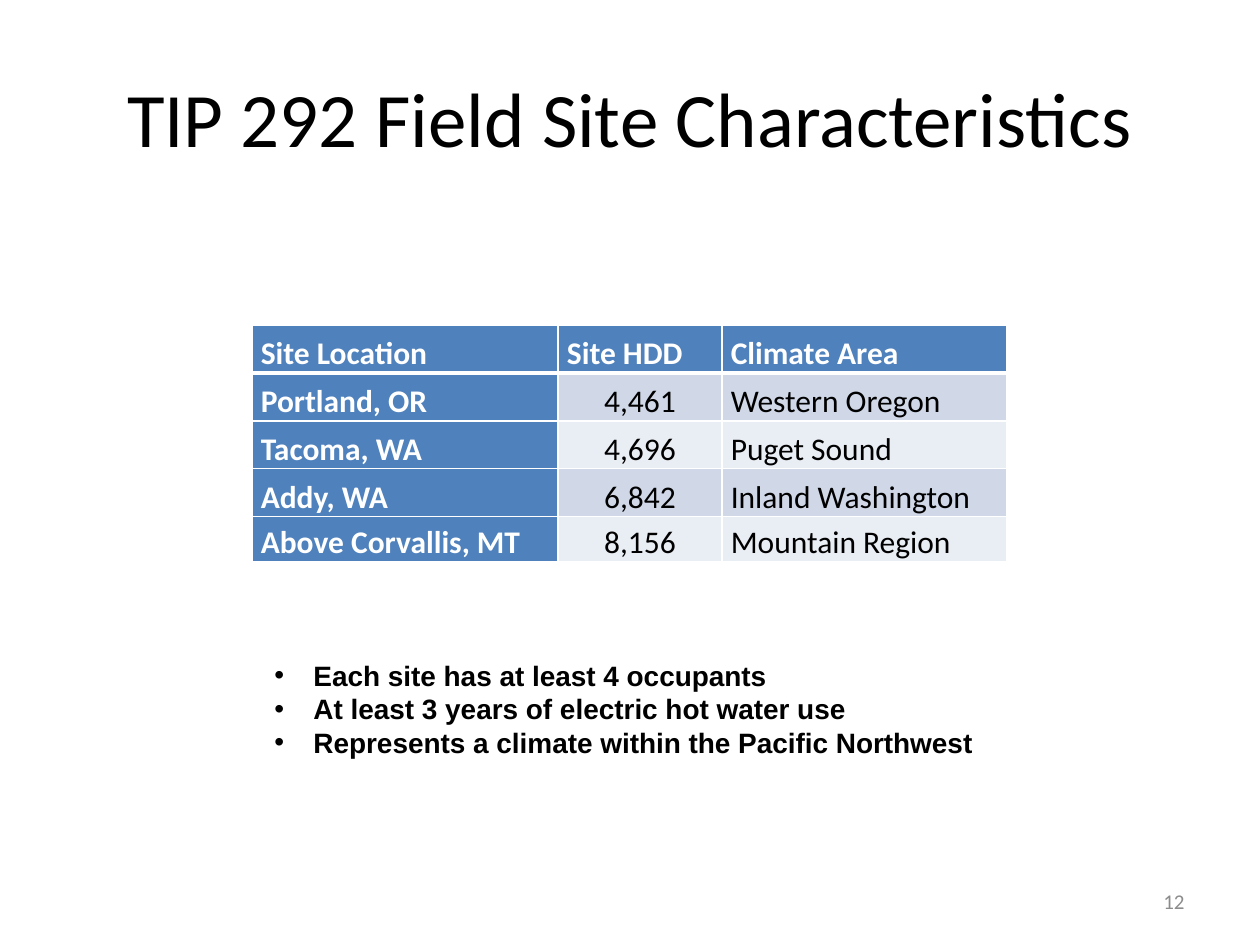
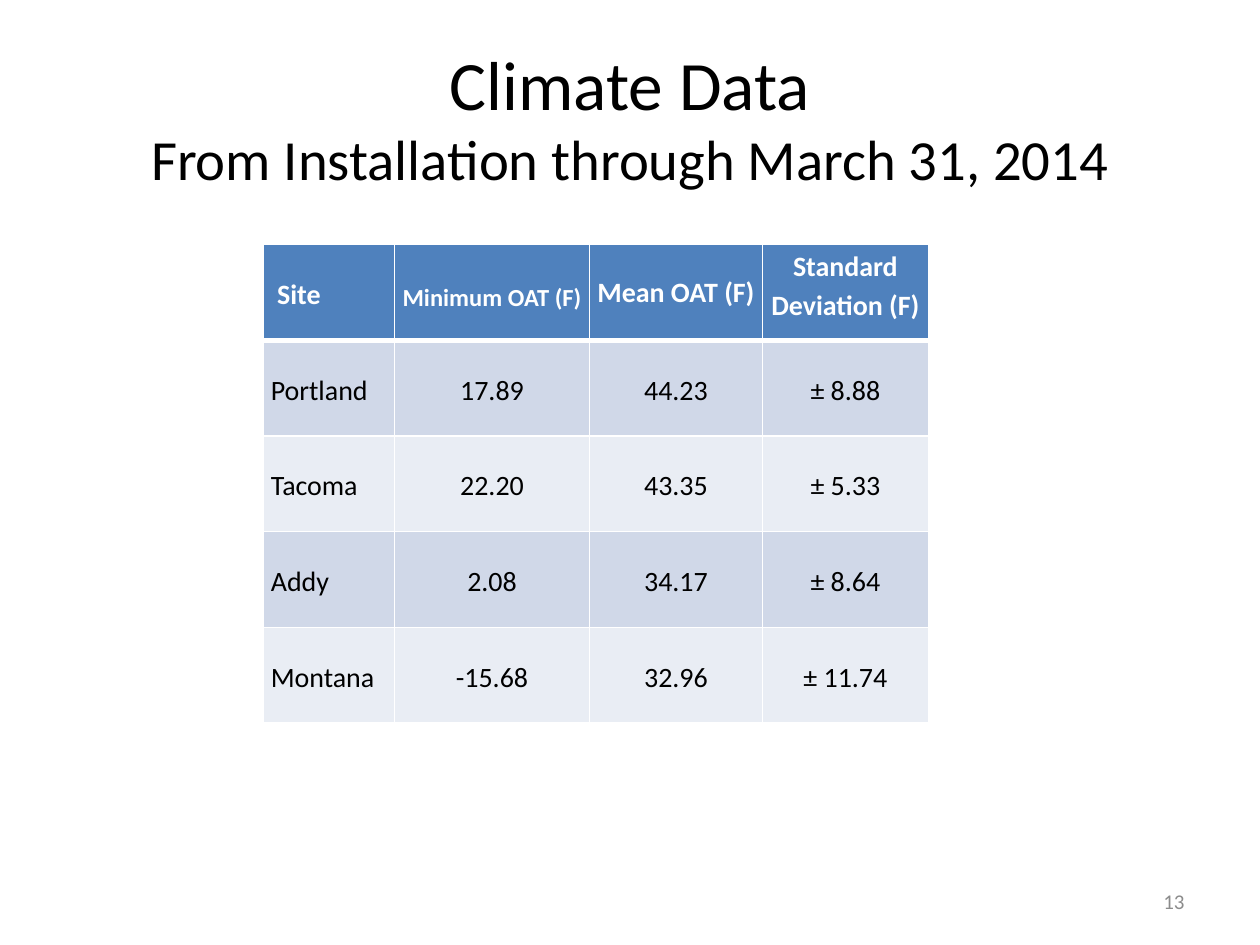
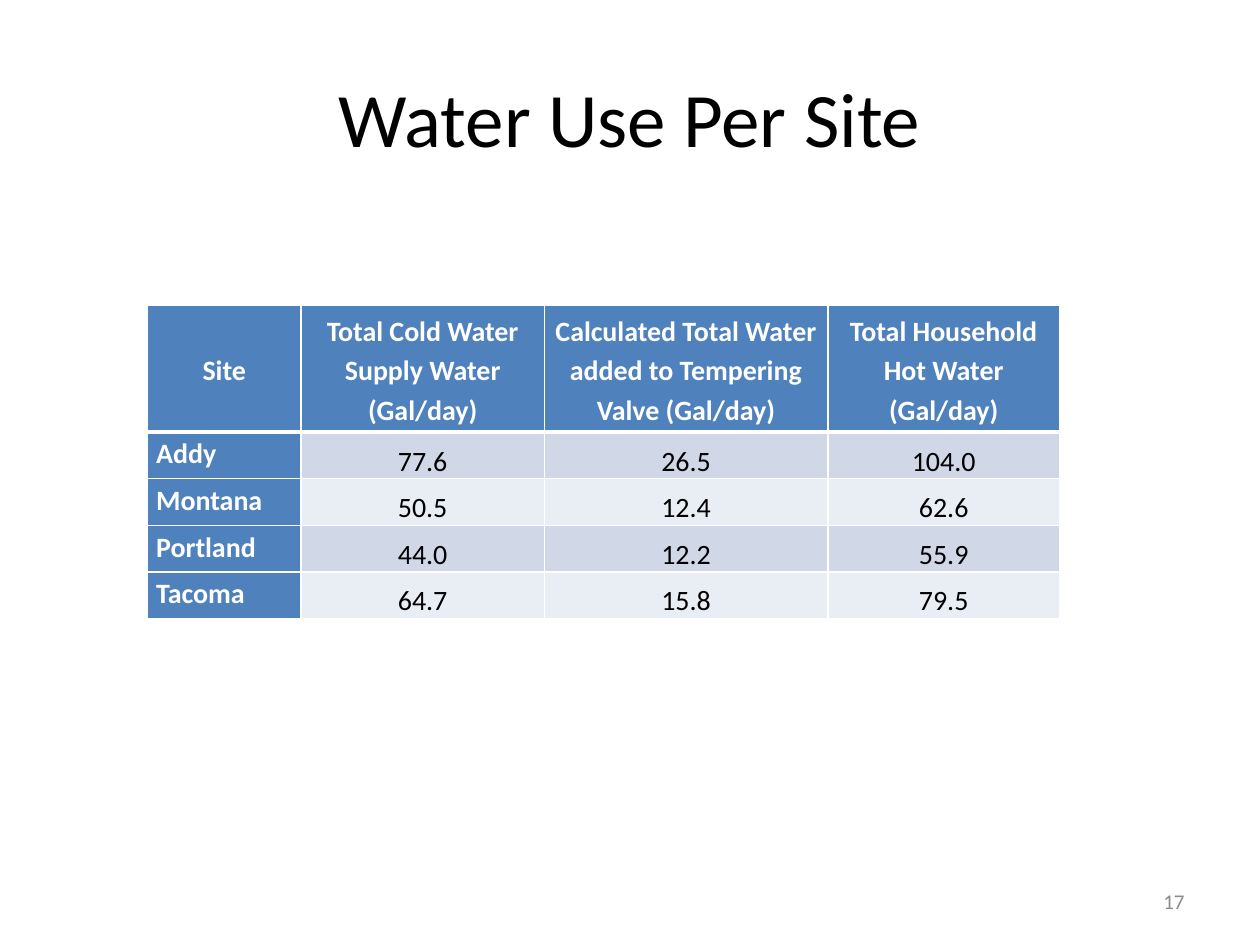
"""Build three slides of field site tables: characteristics, climate and water use."""
from lxml import etree
from pptx import Presentation
from pptx.dml.color import RGBColor
from pptx.enum.text import MSO_ANCHOR, PP_ALIGN
from pptx.oxml.ns import qn
from pptx.util import Inches, Pt

TOP, MIDDLE, BOTTOM = MSO_ANCHOR.TOP, MSO_ANCHOR.MIDDLE, MSO_ANCHOR.BOTTOM
LEFT, CENTER, RIGHT = PP_ALIGN.LEFT, PP_ALIGN.CENTER, PP_ALIGN.RIGHT
BLACK = RGBColor(0x00, 0x00, 0x00)
WHITE = RGBColor(0xFF, 0xFF, 0xFF)
GRAY = RGBColor(0x8C, 0x8C, 0x8C)
BLUE = RGBColor(0x4F, 0x81, 0xBD)
BANDS = [RGBColor(0xD0, 0xD8, 0xE8), RGBColor(0xE9, 0xED, 0xF4)]
BODY_FONT, LIST_FONT = "Calibri", "Arial"
THIN, THICK = 1, 3

pages = [
    {
        "title": "TIP 292 Field Site Characteristics", "title_sizes": [44], "number": "12",
        "origin": (2, 2.58), "columns": [2.43, 1.3, 2.26], "rows": [0.38] * 4 + [0.36],
        "size": 18, "space_after": 10, "margin": 0.07, "site_margins": (0.07, 0.07),
        "blue_sites": True, "header_align": [LEFT] * 3, "body_align": [LEFT, CENTER, LEFT],
        "header_anchors": [BOTTOM] * 3, "site_anchor": BOTTOM, "value_anchor": BOTTOM,
        "header_overrides": {},
        "cells": [
            ["Site Location", "Site HDD", "Climate Area"],
            ["Portland, OR", "4,461", "Western Oregon"],
            ["Tacoma, WA", "4,696", "Puget Sound"],
            ["Addy, WA", "6,842", "Inland Washington"],
            ["Above Corvallis, MT", "8,156", "Mountain Region"],
        ],
        "points": [
            "Each site has at least 4 occupants",
            "At least 3 years of electric hot water use",
            "Represents a climate within the Pacific Northwest",
        ],
    },
    {
        "title": "Climate Data\vFrom Installation through March 31, 2014",
        "title_sizes": [39.6, 32.4], "number": "13",
        "origin": (2.09, 1.94), "columns": [1.04, 1.55, 1.37, 1.32], "rows": [0.76] * 5,
        "size": 16, "space_after": 0, "margin": 0, "site_margins": (0.11, 0.06),
        "blue_sites": False, "header_align": [LEFT] + [CENTER] * 3,
        "body_align": [LEFT] + [CENTER] * 3,
        "header_anchors": [MIDDLE] + [TOP] * 3, "site_anchor": MIDDLE, "value_anchor": MIDDLE,
        "header_overrides": {1: (14, 0.27), 2: (16, 0.21)},
        "cells": [
            ["Site", "Minimum OAT (F)", "Mean OAT (F)", "Standard Deviation (F)"],
            ["Portland", "17.89", "44.23", "± 8.88"],
            ["Tacoma", "22.20", "43.35", "± 5.33"],
            ["Addy", "2.08", "34.17", "± 8.64"],
            ["Montana", "-15.68", "32.96", "± 11.74"],
        ],
        "points": [],
    },
    {
        "title": "Water Use Per Site", "title_sizes": [44], "number": "17",
        "origin": (1.17, 2.42), "columns": [1.22, 1.93, 2.25, 1.84], "rows": [1.01] + [0.37] * 4,
        "size": 16, "space_after": 0, "margin": 0.07, "site_margins": (0.07, 0.07),
        "blue_sites": True, "header_align": [CENTER] * 4, "body_align": [LEFT] + [CENTER] * 3,
        "header_anchors": [MIDDLE] * 4, "site_anchor": TOP, "value_anchor": BOTTOM,
        "header_overrides": {},
        "cells": [
            ["Site", "Total Cold Water Supply Water (Gal/day)",
             "Calculated Total Water added to Tempering Valve (Gal/day)",
             "Total Household Hot Water (Gal/day)"],
            ["Addy", "77.6", "26.5", "104.0"],
            ["Montana", "50.5", "12.4", "62.6"],
            ["Portland", "44.0", "12.2", "55.9"],
            ["Tacoma", "64.7", "15.8", "79.5"],
        ],
        "points": [],
    },
]


def style_text(paragraph, sizes, color, align, font=BODY_FONT, bold=False):
    """Align a paragraph and format its runs, one size per run."""
    paragraph.alignment = align
    for run, size in zip(paragraph.runs, sizes):
        run.font.name = font
        run.font.size = Pt(size)
        run.font.bold = bold
        run.font.color.rgb = color


def add_text(slide, box, lines, anchor):
    """Add a wrapping text box with one paragraph per line."""
    frame = slide.shapes.add_textbox(*[int(length) for length in box]).text_frame
    frame.word_wrap = True
    frame.vertical_anchor = anchor
    for index, line in enumerate(lines):
        paragraph = frame.add_paragraph() if index else frame.paragraphs[0]
        paragraph.text = line
    return frame.paragraphs


prs = Presentation()
prs.slide_width, prs.slide_height = Inches(10), Inches(7.5)
W, H = prs.slide_width, prs.slide_height
blank_layout = prs.slide_layouts[6]

for page in pages:
    slide = prs.slides.add_slide(blank_layout)
    title = add_text(slide, (W * 0.05, H * 0.04, W * 0.9, H / 6), [page["title"]], MIDDLE)
    style_text(title[0], page["title_sizes"], BLACK, CENTER)
    number_box = (W * 0.717, H * 0.927, W * 0.233, H * 0.053)
    number = add_text(slide, number_box, [page["number"]], MIDDLE)
    style_text(number[0], [12], GRAY, RIGHT)

    left, top = page["origin"]
    site_table = slide.shapes.add_table(
        len(page["rows"]), len(page["columns"]), Inches(left), Inches(top),
        Inches(sum(page["columns"])), Inches(sum(page["rows"]))).table
    site_table.horz_banding = False
    for column, width in zip(site_table.columns, page["columns"]):
        column.width = Inches(width)
    for row, height in zip(site_table.rows, page["rows"]):
        row.height = Inches(height)

    for r, values in enumerate(page["cells"]):
        for c, value in enumerate(values):
            cell = site_table.cell(r, c)
            is_header, is_site = r == 0, c == 0
            is_blue = is_header or (is_site and page["blue_sites"])
            size, top_margin = page["size"], 0
            if is_header:
                size, top_margin = page["header_overrides"].get(c, (size, 0))
                align, anchor = page["header_align"][c], page["header_anchors"][c]
            else:
                align = page["body_align"][c]
                anchor = page["site_anchor"] if is_site else page["value_anchor"]

            cell.text_frame.text = value
            cell.vertical_anchor = anchor
            cell.margin_left = Inches(page["site_margins"][min(r, 1)] if is_site else page["margin"])
            cell.margin_right = Inches(page["margin"])
            cell.margin_top, cell.margin_bottom = Inches(top_margin), 0
            paragraph = cell.text_frame.paragraphs[0]
            paragraph.line_spacing = 1.15
            paragraph.space_after = Pt(page["space_after"])
            style_text(paragraph, [size], WHITE if is_blue else BLACK, align, bold=is_blue)

            borders = {"a:lnL": THIN, "a:lnR": THIN,
                       "a:lnT": THICK if r == 1 else THIN,
                       "a:lnB": THICK if is_header else THIN}
            properties = cell._tc.get_or_add_tcPr()
            for edge, weight in borders.items():
                line = etree.SubElement(properties, qn(edge), w=str(Pt(weight)))
                line_fill = etree.SubElement(line, qn("a:solidFill"))
                etree.SubElement(line_fill, qn("a:srgbClr"), val=str(WHITE))
            cell.fill.solid()
            cell.fill.fore_color.rgb = BLUE if is_blue else BANDS[(r - 1) % 2]

    if page["points"]:
        points_box = (W * 0.208, H * 0.69, W * 0.593, H * 0.157)
        for point in add_text(slide, points_box, page["points"], TOP):
            style_text(point, [16], BLACK, LEFT, LIST_FONT, True)
            indent = point._p.get_or_add_pPr()
            indent.set("marL", str(Inches(0.31)))
            indent.set("indent", str(-Inches(0.31)))
            etree.SubElement(indent, qn("a:buFont"), typeface=LIST_FONT)
            etree.SubElement(indent, qn("a:buChar"), char="•")

prs.save("out.pptx")
